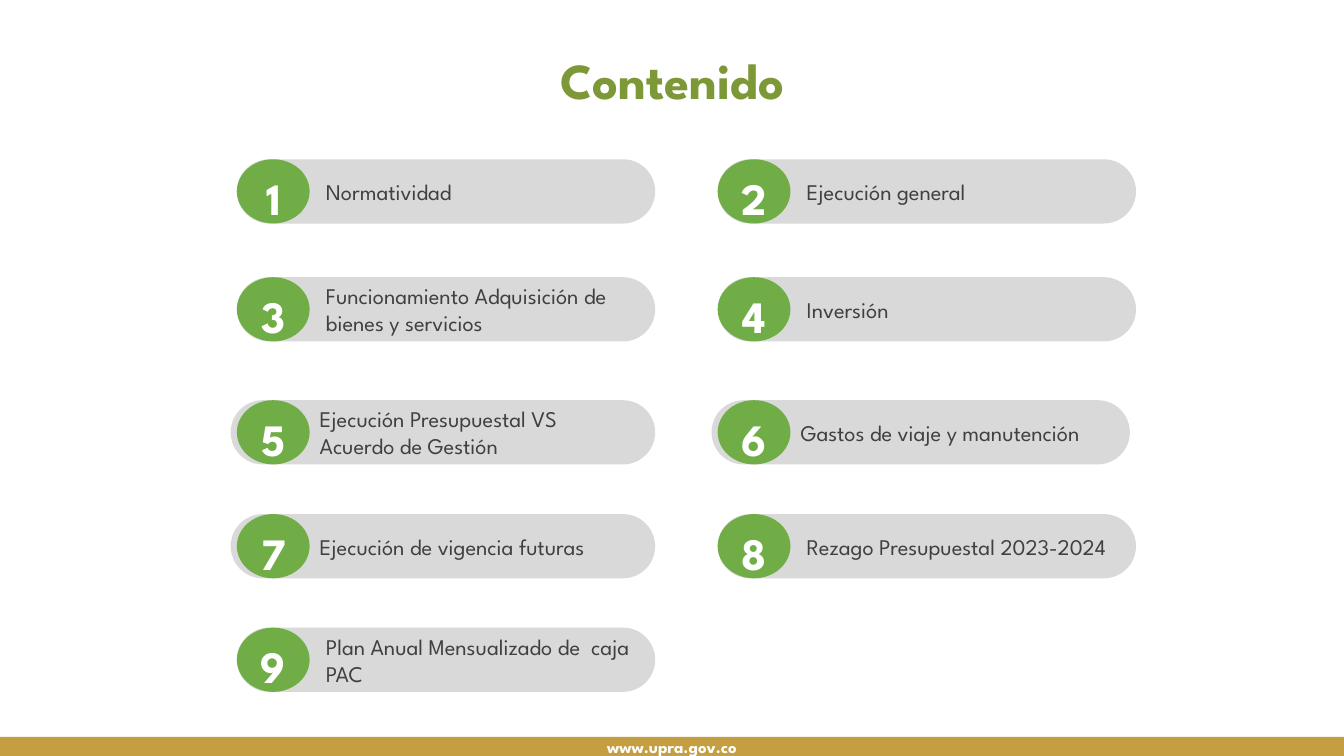
"""Build the contents slide with nine numbered entries in two columns."""
from dataclasses import dataclass

from pptx import Presentation
from pptx.dml.color import RGBColor
from pptx.enum.shapes import MSO_SHAPE as Shape
from pptx.enum.text import MSO_ANCHOR as Anchor, MSO_AUTO_SIZE as AutoSize, PP_ALIGN as Align
from pptx.util import Pt

FONT = "League Spartan"
WHITE = RGBColor(0xFF, 0xFF, 0xFF)
OLIVE = RGBColor(0x7D, 0x98, 0x37)
GREEN = RGBColor(0x70, 0xAD, 0x47)
GOLD = RGBColor(0xC5, 0x9E, 0x41)
PALE_GRAY = RGBColor(0xD9, 0xD9, 0xD9)
DARK_GRAY = RGBColor(0x40, 0x40, 0x40)

PAGE_WIDTH, PAGE_HEIGHT = 960, 540
COLUMN_LEFTS = (169.2, 512.64)
ROW_TOPS = (113.76, 198, 285.84, 367.2, 448.3)
PILL_WIDTH, PILL_HEIGHT = 298.8, 45.9
OVAL_WIDTH = 52
OUTSET = 4.4
NUMBER_WIDTH, NUMBER_HEIGHT = 61.2, 41.2
BAR_HEIGHT = 13.7


@dataclass(frozen=True)
class Entry:
    label: str
    left_shift: float = 0
    extra_width: float = 0


ENTRIES = (
    Entry("Normatividad"),
    Entry("Ejecución general"),
    Entry("Funcionamiento Adquisición de bienes y servicios"),
    Entry("Inversión"),
    Entry("Ejecución Presupuestal VS Acuerdo de Gestión", OUTSET, OUTSET),
    Entry("Gastos de viaje y manutención", OUTSET),
    Entry("Ejecución de vigencia futuras", OUTSET, OUTSET),
    Entry("Rezago Presupuestal 2023-2024"),
    Entry("Plan Anual Mensualizado de  caja PAC"),
)


def write(box, text: str, size: float, color: RGBColor, bold: bool = False,
          align: Align = Align.CENTER, anchor: Anchor = Anchor.TOP) -> None:
    frame = box.text_frame
    frame.text = text
    frame.word_wrap = True
    frame.auto_size = AutoSize.NONE
    frame.vertical_anchor = anchor
    para = frame.paragraphs[0]
    para.alignment = align
    font = para.font
    font.name, font.size, font.bold = FONT, Pt(size), bold
    font.color.rgb = color


def add_filled(shapes, kind: Shape, left: float, top: float,
               width: float, height: float, color: RGBColor):
    shape = shapes.add_shape(kind, Pt(left), Pt(top), Pt(width), Pt(height))
    shape.shadow.inherit = False
    shape.fill.solid()
    shape.fill.fore_color.rgb = color
    shape.line.fill.background()
    return shape


def add_entry(page, number: int, entry: Entry) -> None:
    row, column = divmod(number - 1, len(COLUMN_LEFTS))
    left, top = COLUMN_LEFTS[column], ROW_TOPS[row]
    shapes = page.shapes.add_group_shape().shapes
    pill = add_filled(shapes, Shape.ROUNDED_RECTANGLE, left - entry.left_shift, top,
                      PILL_WIDTH + entry.extra_width, PILL_HEIGHT, PALE_GRAY)
    pill.adjustments[0] = 0.5
    pill.text_frame.margin_left = Pt(56.9)
    write(pill, entry.label, 16, DARK_GRAY, align=Align.LEFT, anchor=Anchor.MIDDLE)
    add_filled(shapes, Shape.OVAL, left, top, OVAL_WIDTH, PILL_HEIGHT, GREEN)
    box = shapes.add_textbox(Pt(left - OUTSET), Pt(top + 4.7),
                             Pt(NUMBER_WIDTH), Pt(NUMBER_HEIGHT))
    write(box, str(number), 32, WHITE, bold=True)


def main() -> None:
    deck = Presentation()
    deck.slide_width, deck.slide_height = Pt(PAGE_WIDTH), Pt(PAGE_HEIGHT)
    page = deck.slides.add_slide(deck.slide_layouts[5])

    title = page.shapes.title
    title.left, title.top, title.width, title.height = Pt(151.2), Pt(36.7), Pt(658), Pt(85.7)
    write(title, "Contenido", 36, OLIVE, bold=True)
    title.text_frame.paragraphs[0].line_spacing = 0.9

    bar = add_filled(page.shapes, Shape.RECTANGLE, 0, PAGE_HEIGHT - BAR_HEIGHT,
                     PAGE_WIDTH, BAR_HEIGHT, GOLD)
    write(bar, "www.upra.gov.co", 12, WHITE, bold=True, anchor=Anchor.MIDDLE)

    for number, entry in enumerate(ENTRIES, start=1):
        add_entry(page, number, entry)
    deck.save("out.pptx")


if __name__ == "__main__":
    main()
